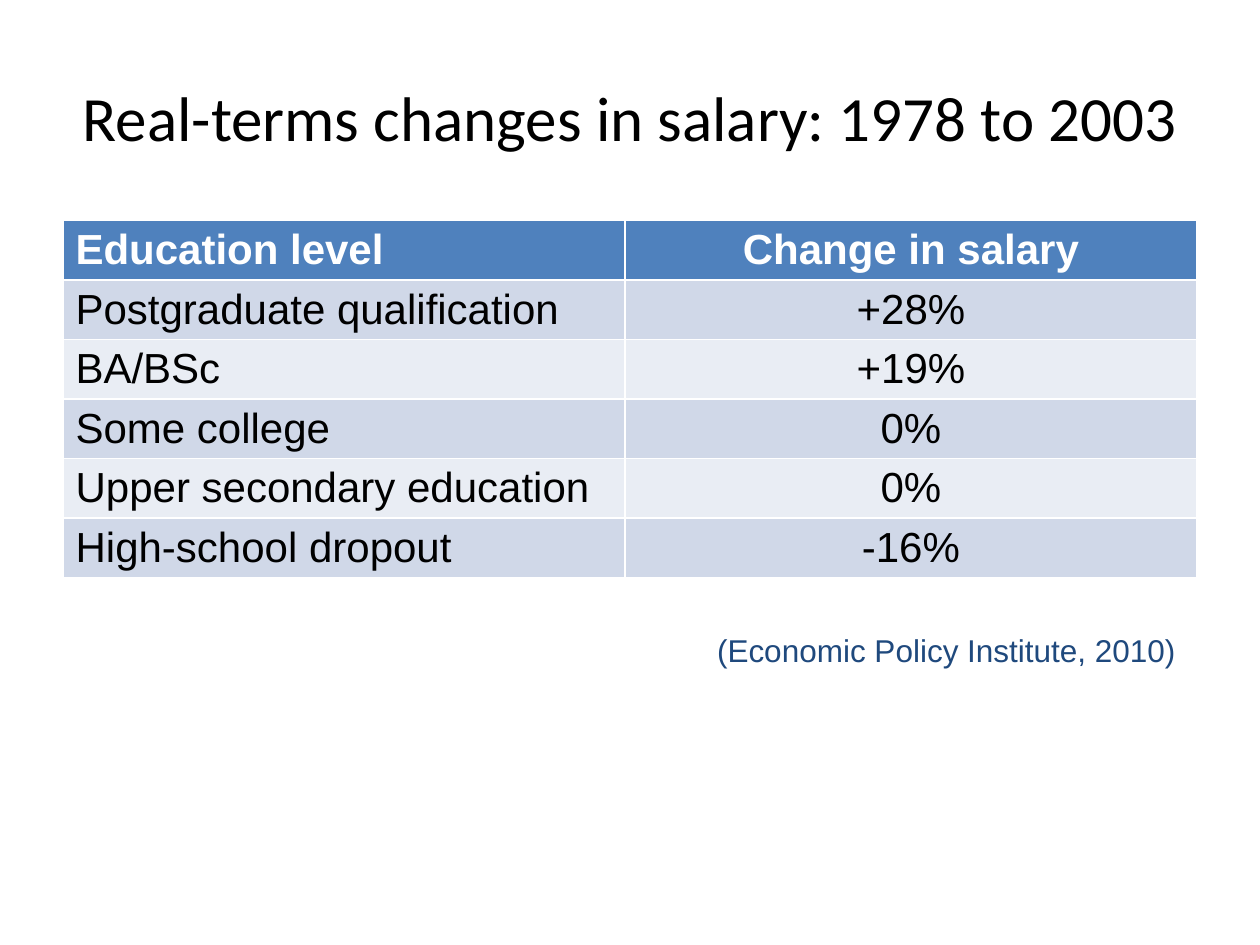
from typing import NamedTuple

import pptx
import pptx.dml.color
import pptx.enum.text
import pptx.util

Inches = pptx.util.Inches
Pt = pptx.util.Pt
RGBColor = pptx.dml.color.RGBColor
Align = pptx.enum.text.PP_ALIGN
Anchor = pptx.enum.text.MSO_ANCHOR

BLACK = RGBColor(0x00, 0x00, 0x00)
WHITE = RGBColor(0xFF, 0xFF, 0xFF)
BLUE = RGBColor(0x4F, 0x81, 0xBD)
NAVY = RGBColor(0x1F, 0x49, 0x7D)
BANDS = (RGBColor(0xD0, 0xD8, 0xE8), RGBColor(0xE9, 0xED, 0xF4))

WIDTHS = (4.46, 4.54)
HEIGHT = 0.41


class Row(NamedTuple):
    level: str
    change: str


HEAD = Row("Education level", "Change in salary")
ROWS = [
    Row("Postgraduate qualification", "+28%"),
    Row("BA/BSc", "+19%"),
    Row("Some college", "0%"),
    Row("Upper secondary education", "0%"),
    Row("High-school dropout", "-16%"),
]


def write(frame, text: str, size: int, color: RGBColor, align: Align,
          face: str = "Arial", bold: bool = False) -> None:
    frame.text = text
    line = frame.paragraphs[0]
    line.alignment = align
    font = line.runs[0].font
    font.name = face
    font.size = Pt(size)
    font.bold = bold
    font.color.rgb = color


def place(shape, left: float, top: float, width: float, height: float) -> None:
    shape.left, shape.top = Inches(left), Inches(top)
    shape.width, shape.height = Inches(width), Inches(height)


def add_grid(slide) -> None:
    """Add the salary table, with a dark header over banded rows."""
    rows = [HEAD, *ROWS]
    grid = slide.shapes.add_table(
        len(rows), len(WIDTHS), Inches(0.5), Inches(1.75),
        Inches(sum(WIDTHS)), Inches(HEIGHT * len(rows))).table
    for column, width in zip(grid.columns, WIDTHS):
        column.width = Inches(width)
    for r, row in enumerate(rows):
        head = r == 0
        grid.rows[r].height = Inches(HEIGHT)
        for c, text in enumerate(row):
            cell = grid.cell(r, c)
            cell.fill.solid()
            cell.fill.fore_color.rgb = BLUE if head else BANDS[(r - 1) % 2]
            write(cell.text_frame, text, 24, WHITE if head else BLACK,
                  Align.CENTER if c else Align.LEFT, bold=head)


def main() -> None:
    deck = pptx.Presentation()
    deck.slide_width, deck.slide_height = Inches(10), Inches(7.5)
    slide = deck.slides.add_slide(deck.slide_layouts[5])

    title = slide.shapes.title
    place(title, 0.5, 0.3, 9, 1.25)
    title.text_frame.vertical_anchor = Anchor.MIDDLE
    write(title.text_frame, "Real-terms changes in salary: 1978 to 2003",
          36, BLACK, Align.CENTER, face="Calibri")

    add_grid(slide)

    credit = slide.shapes.add_textbox(
        Inches(4.83), Inches(4.96), Inches(4.6), Inches(0.4))
    credit.text_frame.word_wrap = True
    write(credit.text_frame, "(Economic Policy Institute, 2010)",
          18, NAVY, Align.RIGHT)

    deck.save("out.pptx")


if __name__ == "__main__":
    main()
